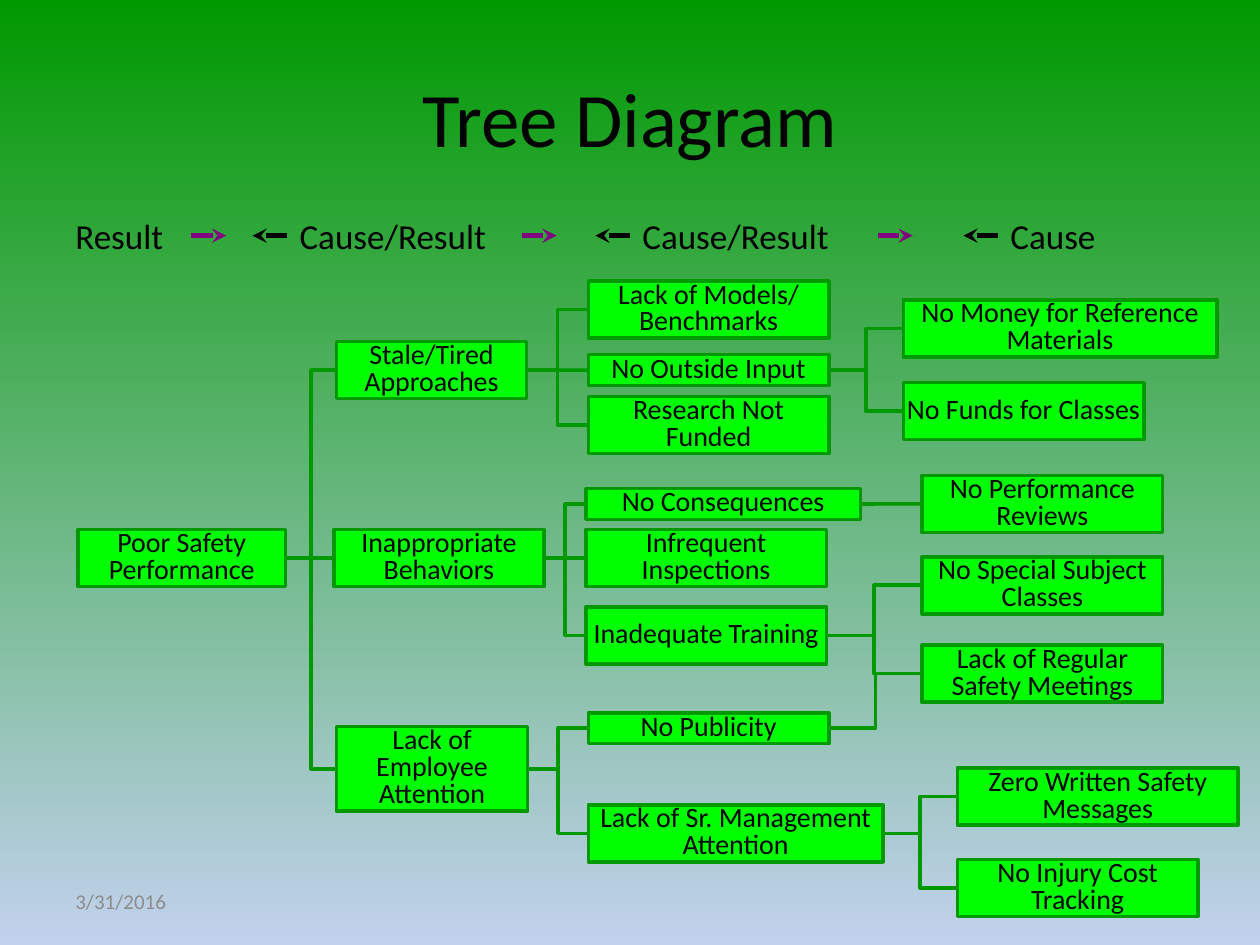
from dataclasses import dataclass

from lxml import etree
from pptx import Presentation
from pptx.dml.color import RGBColor
from pptx.enum.shapes import MSO_CONNECTOR, MSO_SHAPE
from pptx.enum.text import MSO_ANCHOR, PP_ALIGN
from pptx.oxml.ns import qn
from pptx.util import Cm, Pt

STRAIGHT, ELBOW = MSO_CONNECTOR.STRAIGHT, MSO_CONNECTOR.ELBOW
RECTANGLE = MSO_SHAPE.RECTANGLE
TOP, MIDDLE = MSO_ANCHOR.TOP, MSO_ANCHOR.MIDDLE
LEFT, CENTER = PP_ALIGN.LEFT, PP_ALIGN.CENTER
LEFT_SITE, RIGHT_SITE = 1, 3


@dataclass(frozen=True)
class Theme:
    font: str = "Calibri"
    ink: RGBColor = RGBColor(0x00, 0x00, 0x00)
    muted: RGBColor = RGBColor(0x8C, 0x8C, 0x8C)
    green: RGBColor = RGBColor(0x00, 0x99, 0x00)
    lime: RGBColor = RGBColor(0x00, 0xFF, 0x00)
    sky: RGBColor = RGBColor(0xC2, 0xD1, 0xED)
    purple: RGBColor = RGBColor(0x80, 0x00, 0x80)
    title_size: int = 44
    heading_size: int = 20
    box_size: int = 16
    date_size: int = 12
    box_line: float = 2
    arrow_line: float = 2.75


theme = Theme()


def write(shape, text, size, color=theme.ink, align=LEFT, anchor=TOP, spacing=None, inset=None):
    frame = shape.text_frame
    frame.word_wrap = True
    frame.vertical_anchor = anchor
    if inset is not None:
        frame.margin_left = frame.margin_right = inset
        frame.margin_top = frame.margin_bottom = inset
    paragraph = frame.paragraphs[0]
    paragraph.alignment = align
    paragraph.line_spacing = spacing
    run = paragraph.add_run()
    run.text = text
    run.font.name = theme.font
    run.font.size = Pt(size)
    run.font.color.rgb = color


def style_line(connector, color, width, arrow=False):
    connector.line.color.rgb = color
    connector.line.width = Pt(width)
    if arrow:
        etree.SubElement(connector.line._get_or_add_ln(), qn("a:tailEnd"), type="stealth")
    etree.SubElement(connector._element.spPr, qn("a:effectLst"))


prs = Presentation()
prs.slide_width, prs.slide_height = Cm(25.4), Cm(19.05)
slide = prs.slides.add_slide(prs.slide_layouts[6])
shapes = slide.shapes

background = slide.background.fill
background.gradient()
background.gradient_angle = 270
for stop, color, position in zip(background.gradient_stops, (theme.green, theme.sky), (0, 1)):
    stop.color.rgb = color
    stop.position = position

title = shapes.add_textbox(Cm(1.27), Cm(0.76), Cm(22.86), Cm(3.18))
write(title, "Tree Diagram", theme.title_size, align=CENTER, anchor=MIDDLE)

# Each box: parent, text, left, width, vertical centre, lines of height (cm)
HEIGHTS = {1: 0.62, 2: 1.15, 3: 1.7}
ROOT = "Poor Safety Performance"
STALE = "Stale/Tired Approaches"
BEHAVIORS = "Inappropriate Behaviors"
EMPLOYEES = "Lack of Employee Attention"
OUTSIDE = "No Outside Input"
CONSEQUENCES = "No Consequences"
TRAINING = "Inadequate Training"
PUBLICITY = "No Publicity"
MANAGEMENT = "Lack of Sr. Management Attention"
MEETINGS = "Lack of Regular Safety Meetings"

tree = [
    (None, ROOT, 1.57, 4.19, 11.25, 2),
    (ROOT, STALE, 6.78, 3.84, 7.46, 2),
    (ROOT, BEHAVIORS, 6.73, 4.24, 11.25, 2),
    (ROOT, EMPLOYEES, 6.78, 3.86, 15.5, 3),
    (STALE, "Lack of Models/ Benchmarks", 11.86, 4.85, 6.24, 2),
    (STALE, OUTSIDE, 11.86, 4.85, 7.46, 1),
    (STALE, "Research Not Funded", 11.86, 4.85, 8.57, 2),
    (OUTSIDE, "No Money for Reference Materials", 18.21, 6.32, 6.62, 2),
    (OUTSIDE, "No Funds for Classes", 18.21, 4.85, 8.29, 2),
    (BEHAVIORS, CONSEQUENCES, 11.81, 5.54, 10.16, 1),
    (BEHAVIORS, "Infrequent Inspections", 11.81, 4.85, 11.25, 2),
    (BEHAVIORS, TRAINING, 11.81, 4.85, 12.81, 2),
    (EMPLOYEES, PUBLICITY, 11.86, 4.85, 14.68, 1),
    (EMPLOYEES, MANAGEMENT, 11.86, 5.94, 16.8, 2),
    (CONSEQUENCES, "No Performance Reviews", 18.59, 4.85, 10.16, 2),
    (TRAINING, "No Special Subject Classes", 18.59, 4.85, 11.8, 2),
    (TRAINING, MEETINGS, 18.59, 4.85, 13.58, 2),
    (MANAGEMENT, "Zero Written Safety Messages", 19.3, 5.66, 16.06, 2),
    (MANAGEMENT, "No Injury Cost Tracking", 19.3, 4.85, 17.9, 2),
]

boxes, centres = {}, {}
for _, text, left, width, centre, lines in tree:
    height = HEIGHTS[lines]
    box = shapes.add_shape(RECTANGLE, Cm(left), Cm(centre - height / 2), Cm(width), Cm(height))
    box.shadow.inherit = False
    box.fill.solid()
    box.fill.fore_color.rgb = theme.lime
    box.line.color.rgb = theme.green
    box.line.width = Pt(theme.box_line)
    write(box, text, theme.box_size, align=CENTER, anchor=MIDDLE, spacing=0.8, inset=0)
    boxes[text], centres[text] = box, centre

branches = [(parent, text) for parent, text, *_ in tree if parent]
for parent, child in branches + [(PUBLICITY, MEETINGS)]:
    kind = STRAIGHT if centres[parent] == centres[child] else ELBOW
    branch = shapes.add_connector(kind, 0, 0, 0, 0)
    branch.begin_connect(boxes[parent], RIGHT_SITE)
    branch.end_connect(boxes[child], LEFT_SITE)
    style_line(branch, theme.green, theme.box_line)

headings = [
    ("Result", 1.27, 3.99),
    ("Cause/Result", 5.79, 5.08),
    ("Cause/Result", 12.7, 4.88),
    ("Cause", 20.12, 3.56),
]
for text, left, width in headings:
    heading = shapes.add_textbox(Cm(left), Cm(4.19), Cm(width), Cm(1.1))
    write(heading, text, theme.heading_size)

ARROW_Y, ARROW_LENGTH = Cm(4.75), 0.7
forward = [(left, ARROW_LENGTH, theme.purple) for left in (3.86, 10.52, 17.7)]
backward = [(left, -ARROW_LENGTH, theme.ink) for _, left, _ in headings[1:]]
for start, reach, color in forward + backward:
    arrow = shapes.add_connector(STRAIGHT, Cm(start), ARROW_Y, Cm(start + reach), ARROW_Y)
    style_line(arrow, color, theme.arrow_line, arrow=True)

date = shapes.add_textbox(Cm(1.27), Cm(17.66), Cm(5.93), Cm(1.01))
write(date, "3/31/2016", theme.date_size, color=theme.muted, anchor=MIDDLE)

prs.save("out.pptx")
